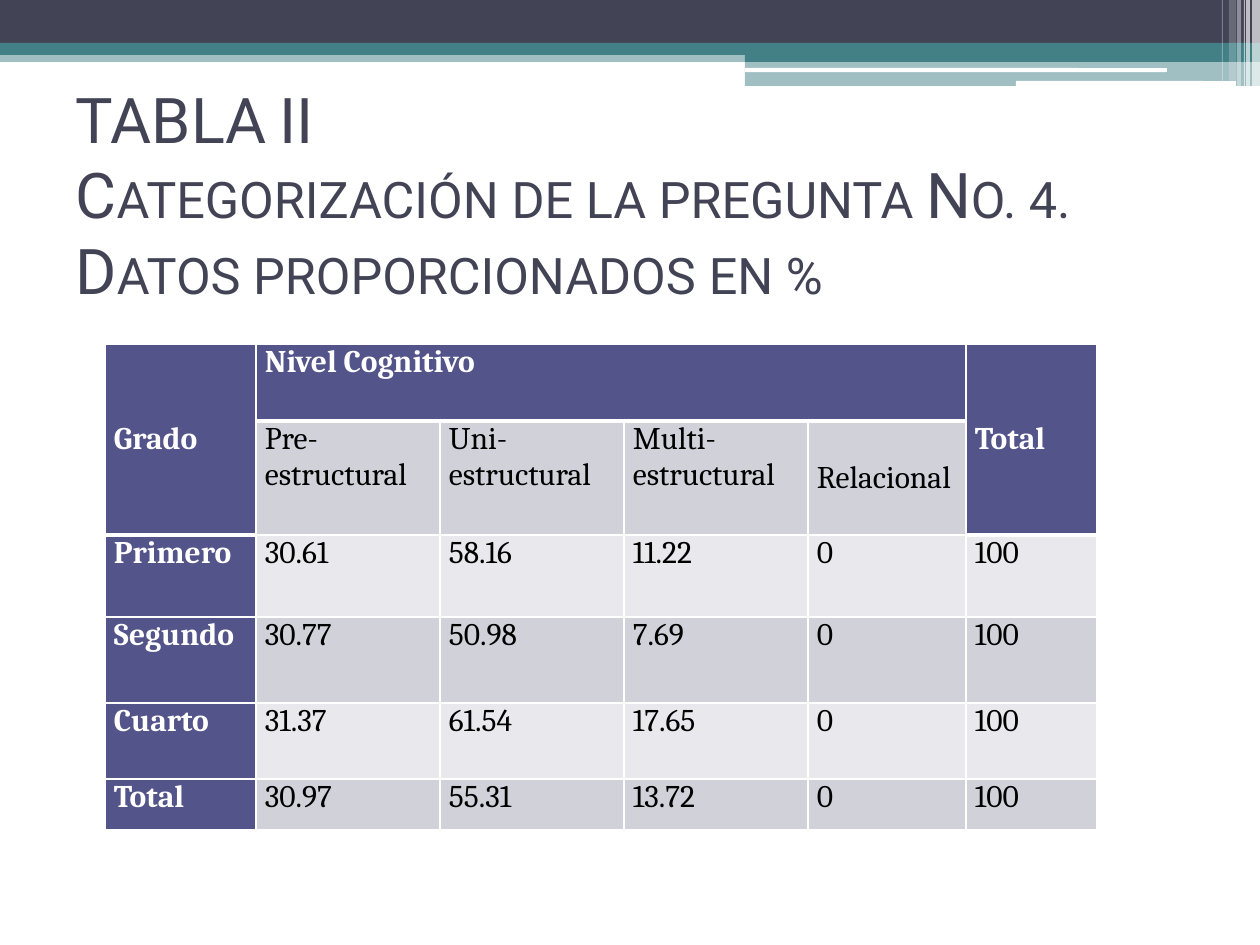
import pptx
import pptx.util
import pptx.dml.color
import pptx.enum.shapes
import pptx.enum.text
import pptx.oxml.ns
import lxml.etree

RGB = pptx.dml.color.RGBColor
DARK = RGB(0x42, 0x44, 0x56)
TEAL = RGB(0x43, 0x80, 0x86)
WHITE = RGB(0xFF, 0xFF, 0xFF)
BLACK = RGB(0, 0, 0)
HEAD = RGB(0x53, 0x54, 0x8A)
BANDS = [RGB(0xE9, 0xE9, 0xED), RGB(0xD1, 0xD1, 0xDA)]
SCALE = 914400 / 126
ALIGN = pptx.enum.text.PP_ALIGN
ANCHOR = pptx.enum.text.MSO_ANCHOR
KIND = pptx.enum.shapes.MSO_SHAPE

COLS = [151, 184, 184, 184, 158, 131]
ROWS = [77, 114, 82, 86, 76, 51]
DATA = [
    ["Grado", "Nivel Cognitivo", "", "", "", "Total"],
    ["", "Pre-estructural", "Uni-estructural", "Multi- estructural", "Relacional", ""],
    ["Primero", "30.61", "58.16", "11.22", "0", "100"],
    ["Segundo", "30.77", "50.98", "7.69", "0", "100"],
    ["Cuarto", "31.37", "61.54", "17.65", "0", "100"],
    ["Total", "30.97", "55.31", "13.72", "0", "100"],
]


def px(num):
    """Turn pixels into EMU."""
    return pptx.util.Emu(round(num * SCALE))


def write(frame, text, font, size, color, bold=False, align=ALIGN.LEFT, caps=False):
    """Put formatted text in a frame."""
    para = frame.paragraphs[0]
    para.text = text
    para.alignment = align
    for run in para.runs:
        run.font.name = font
        run.font.size = pptx.util.Pt(size)
        run.font.bold = bold
        run.font.color.rgb = color
        if caps:
            run.font._element.set("cap", "small")


def add_bar(slide, box, color, alpha=100, kind=KIND.RECTANGLE):
    """Draw one plain bar with a given opacity."""
    bar = slide.shapes.add_shape(kind, *map(px, box))
    bar.shadow.inherit = False
    bar.line.fill.background()
    bar.fill.solid()
    bar.fill.fore_color.rgb = color
    if alpha < 100:
        tint = bar._element.spPr.find(".//" + pptx.oxml.ns.qn("a:srgbClr"))
        lxml.etree.SubElement(tint, pptx.oxml.ns.qn("a:alpha"), val=str(alpha * 1000))


def add_band(slide, box):
    """Draw the layered band along the top of the slide."""
    left, top, wide, high = box
    step = left + 745
    rest = wide - 745
    add_bar(slide, (left, top + 50, wide, 12), TEAL, 50)
    add_bar(slide, (left, top, wide, 43), DARK)
    add_bar(slide, (left, top + 43, wide, 12), TEAL)
    add_bar(slide, (step, top + 50, rest, 12), TEAL)
    add_bar(slide, (step, top + 61, rest, high - 61), TEAL, 50)
    for x, y, w, h in [(745, 68, 422, 4), (1016, 81, 220, 5)]:
        add_bar(slide, (left + x, top + y, w, h), WHITE, kind=KIND.ROUNDED_RECTANGLE)
    stripes = [(1252, 8, 0, 65), (1246, 4, 0, 65), (1244, 1, 0, 60),
               (1237, 4, 0, 40), (1229, 7, 5, 20), (1222, 1, 5, 30)]
    for x, w, cut, alpha in stripes:
        add_bar(slide, (left + x, top, w, high - cut), WHITE, alpha)


def add_title(slide, box):
    """Fill and place the title."""
    title = slide.shapes.title
    title.left, title.top, title.width, title.height = map(px, box)
    frame = title.text_frame
    frame.word_wrap = True
    frame.auto_size = pptx.enum.text.MSO_AUTO_SIZE.NONE
    frame.vertical_anchor = ANCHOR.MIDDLE
    text = "TABLA II\vCategorización de la pregunta No. 4. Datos proporcionados en %"
    write(frame, text, "Roboto", 36, DARK, caps=True)


def is_thick(row, col):
    """Tell whether the heavy rule runs below a cell."""
    return row < 2 and (col in (0, 5) or row == 0)


def set_edges(cell, row, col):
    """Draw the white rules round a cell."""
    props = cell._tc.get_or_add_tcPr()
    above = row > 0 and is_thick(row - 1, col)
    sizes = {"L": 1, "R": 1, "T": 3 if above else 1, "B": 3 if is_thick(row, col) else 1}
    for side, size in sizes.items():
        line = lxml.etree.SubElement(
            props, pptx.oxml.ns.qn("a:ln" + side), w=str(pptx.util.Pt(size)))
        fill = lxml.etree.SubElement(line, pptx.oxml.ns.qn("a:solidFill"))
        lxml.etree.SubElement(fill, pptx.oxml.ns.qn("a:srgbClr"), val=str(WHITE))


def add_grid(slide, box):
    """Build the table of results."""
    table = slide.shapes.add_table(len(ROWS), len(COLS), *map(px, box)).table
    for col, wide in zip(table.columns, COLS):
        col.width = px(wide)
    for row, high in zip(table.rows, ROWS):
        row.height = px(high)
    for r, line in enumerate(DATA):
        for c, text in enumerate(line):
            cell = table.cell(r, c)
            head = r == 0 or c == 0 or (r == 1 and c == 5)
            set_edges(cell, r, c)
            cell.fill.solid()
            cell.fill.fore_color.rgb = HEAD if head else BANDS[r % 2]
            cell.margin_left = cell.margin_right = px(9)
            cell.margin_top = cell.margin_bottom = 0
            mid = text in ("Grado", "Relacional") or (r == 0 and c == 5)
            cell.vertical_anchor = ANCHOR.MIDDLE if mid else ANCHOR.TOP
            if text:
                write(cell.text_frame, text, "Cambria", 18, WHITE if head else BLACK,
                      bold=head, align=ALIGN.JUSTIFY)
    for first, last in [((0, 0), (1, 0)), ((0, 1), (0, 4)), ((0, 5), (1, 5))]:
        table.cell(*first).merge(table.cell(*last))


def main():
    """Build and save the slide."""
    deck = pptx.Presentation()
    deck.slide_width, deck.slide_height = px(1260), px(945)
    slide = deck.slides.add_slide(deck.slide_layouts[5])
    add_band(slide, (0, 0, 1260, 86))
    add_title(slide, (63, 81, 1134, 225))
    add_grid(slide, (105, 344, sum(COLS), sum(ROWS)))
    deck.save("out.pptx")


if __name__ == "__main__":
    main()
